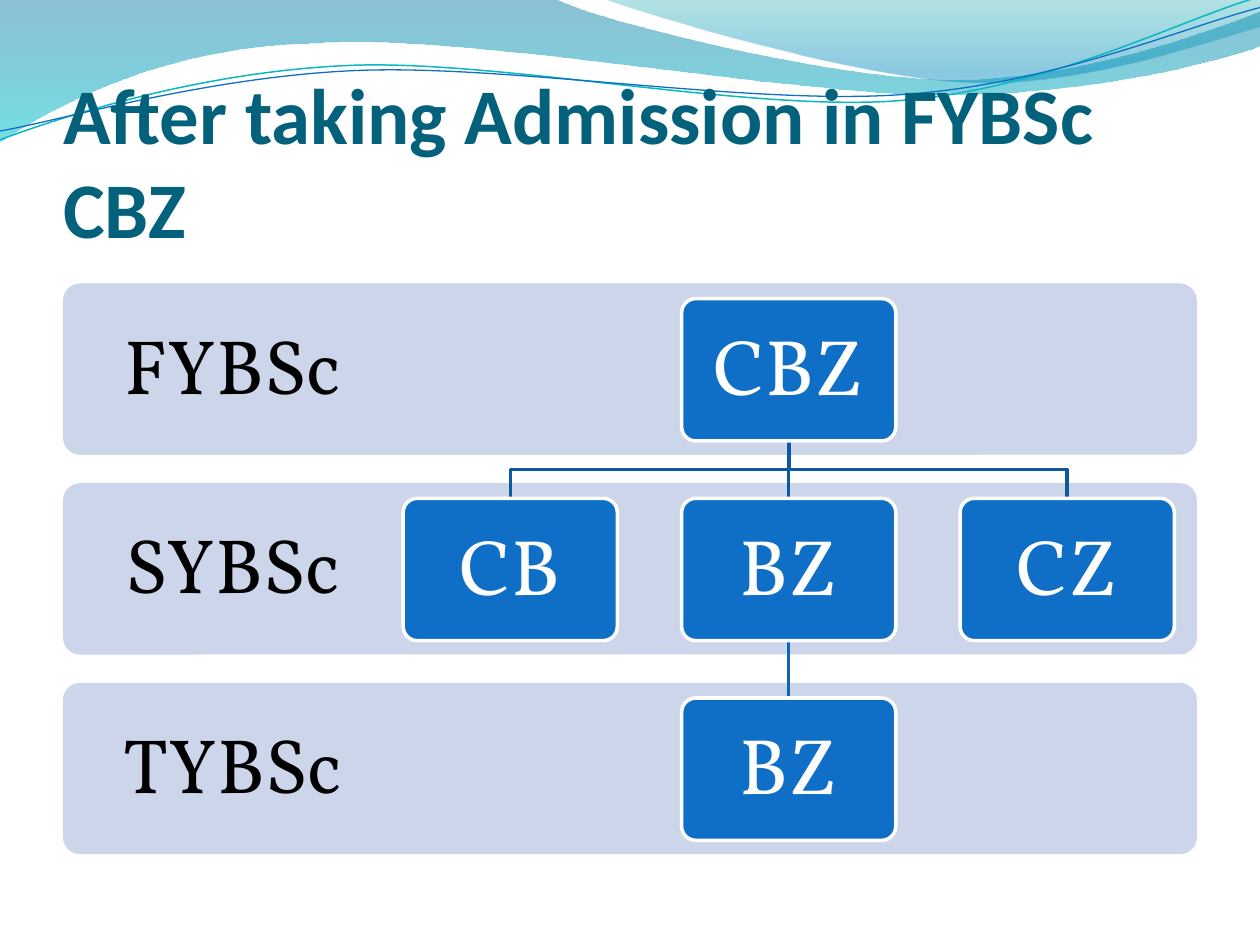
from dataclasses import dataclass

from lxml.etree import SubElement
from pptx import Presentation
from pptx.dml.color import RGBColor
from pptx.enum.shapes import MSO_SHAPE
from pptx.enum.text import MSO_ANCHOR, MSO_AUTO_SIZE, PP_ALIGN
from pptx.oxml.ns import qn
from pptx.util import Inches, Pt


@dataclass(frozen=True)
class Theme:
    title: str = "04617B"
    band: str = "CCD5EA"
    card: str = "0F6FC6"
    white: str = "FFFFFF"
    black: str = "000000"
    upper_link: str = "0C599F"
    lower_link: str = "0E65B4"
    teal_line: str = "0AB8BF"
    blue_line: str = "0F6FC6"
    heading_font: str = "Calibri"
    body_font: str = "Vollkorn"
    heading_size: int = 45
    card_size: int = 45
    label_size: int = 44


def rgb(value):
    return RGBColor.from_string(value)


def write_text(frame, text, *, font, size, color, bold=False, align=PP_ALIGN.CENTER,
               anchor=MSO_ANCHOR.MIDDLE, insets=(0, 0, 0, 0), spacing=None, after=None):
    frame.word_wrap = True
    frame.auto_size = MSO_AUTO_SIZE.NONE
    frame.vertical_anchor = anchor
    (frame.margin_left, frame.margin_top,
     frame.margin_right, frame.margin_bottom) = map(Inches, insets)
    paragraph = frame.paragraphs[0]
    paragraph.alignment = align
    paragraph.line_spacing = spacing
    paragraph.space_after = after
    run = paragraph.add_run()
    run.text = text
    run.font.name, run.font.size, run.font.bold = font, Pt(size), bold
    run.font.color.rgb = rgb(color)


class SlideBuilder:
    def __init__(self, slide, theme):
        self.slide, self.theme = slide, theme

    def title(self, text, box):
        heading = self.slide.shapes.title
        heading.left, heading.top, heading.width, heading.height = map(Inches, box)
        tree = heading._element.getparent()
        tree.append(heading._element)  # in front of the waves
        write_text(heading.text_frame, text, font=self.theme.heading_font,
                   size=self.theme.heading_size, color=self.theme.title, bold=True,
                   align=PP_ALIGN.LEFT, anchor=MSO_ANCHOR.BOTTOM, insets=(0, 0.05, 0, 0))

    def outline(self, start, segments, closed=False):
        """Draw line ends (x, y) and cubic curves (two handles and an end)."""
        points = [(Inches(segment[i]), Inches(segment[i + 1]))
                  for segment in segments for i in range(0, len(segment), 2)]
        builder = self.slide.shapes.build_freeform(*map(Inches, start))
        builder.add_line_segments(points, close=closed)
        shape = builder.convert_to_shape()
        shape.shadow.inherit = False
        lines = iter(list(shape._element.iter(qn("a:lnTo"))))
        for segment in segments:
            first, *handles = [next(lines) for _ in range(len(segment) // 2)]
            if handles:
                curve = first.makeelement(qn("a:cubicBezTo"))
                first.addprevious(curve)
                for line in (first, *handles):
                    curve.append(line[0])
                    line.getparent().remove(line)
        return shape

    def wave(self, start, segments, stops):
        wave = self.outline(start, segments, closed=True)
        wave.line.fill.background()
        wave.fill.gradient()
        wave.fill.gradient_angle = 270
        for stop, (position, color, opacity) in zip(wave.fill.gradient_stops, stops):
            stop.color.rgb = rgb(color)
            stop._gs.set("pos", str(position * 1000))
            SubElement(stop._gs[0], qn("a:alpha")).set("val", str(opacity * 1000))

    def stroke(self, start, segments, color, width):
        stroke = self.outline(start, segments)
        stroke.fill.background()
        stroke.line.color.rgb, stroke.line.width = rgb(color), Pt(width)

    def panel(self, box, fill, border=None):
        panel = self.slide.shapes.add_shape(MSO_SHAPE.ROUNDED_RECTANGLE, *map(Inches, box))
        panel.adjustments[0] = 0.1
        panel.shadow.inherit = False
        panel.fill.solid()
        panel.fill.fore_color.rgb = rgb(fill)
        if border:
            panel.line.color.rgb, panel.line.width = rgb(border), Pt(2)
        else:
            panel.line.fill.background()

    def label(self, text, box, size, color, inset):
        label = self.slide.shapes.add_textbox(*map(Inches, box))
        write_text(label.text_frame, text, font=self.theme.body_font, size=size, color=color,
                   insets=(inset,) * 4, spacing=0.9, after=Pt(15))

    def band(self, text, box, label_width):
        left, top, _, height = box
        self.panel(box, self.theme.band)
        self.label(text, (left, top, label_width, height),
                   self.theme.label_size, self.theme.black, 0.34)

    def card(self, text, box):
        left, top, width, height = box
        edge = 0.03
        self.panel(box, self.theme.card, self.theme.white)
        self.label(text, (left + edge, top + edge, width - 2 * edge, height - 2 * edge),
                   self.theme.card_size, self.theme.white, 0.19)


presentation = Presentation()
presentation.slide_width, presentation.slide_height = Inches(10), Inches(7.5)
theme = Theme()
page = SlideBuilder(presentation.slides.add_slide(presentation.slide_layouts[5]), theme)

# Waves along the top edge
page.wave((0, 0), [
    (4.4, -0.01), (4.76, 0.17, 6.64, 0.63, 7.58, 0.63), (8.53, 0.63, 9.58, 0.26, 10, 0.09),
    (10.01, 0.36), (9.83, 0.44, 8.7, 0.76, 7.46, 0.75), (6.22, 0.75, 3.82, 0.28, 2.57, 0.34),
    (1.29, 0.36, 0.46, 0.83, -0.01, 1.13), (0, 0)],
    [(0, "0074A1", 45), (100, "00C6CF", 55)])
page.wave((4.79, -0.01), [
    (5.09, 0.11, 6.82, 0.62, 7.69, 0.65), (8.56, 0.69, 9.61, 0.32, 10, 0.21),
    (10, 0), (4.79, -0.01)],
    [(0, "00A1A9", 30), (80, "008BBF", 45)])
page.stroke((0, 1.11), [
    (0.48, 0.93, 1.58, 0.57, 2.77, 0.52), (3.95, 0.47, 5.93, 0.89, 7.13, 0.8),
    (8.33, 0.71, 9.38, 0.15, 9.98, -0.02)], theme.teal_line, 0.85)
page.stroke((0, 1.04), [
    (0.47, 0.96, 1.64, 0.61, 2.83, 0.56), (4.03, 0.51, 5.97, 0.84, 7.17, 0.75),
    (8.36, 0.67, 9.41, 0.21, 10, 0.06)], theme.blue_line, 0.75)

# Title
page.title("After taking Admission in FYBSc CBZ", (0.5, 0.77, 9, 1.25))

# Year bands and the subject cards in each; a column is -1, 0 or 1
YEARS = [("FYBSc", {0: "CBZ"}), ("SYBSc", {-1: "CB", 0: "BZ", 1: "CZ"}), ("TYBSc", {0: "BZ"})]
BAND_TOP, BAND_HEIGHT, ROW_STEP = 2.25, 1.36, 1.585
CARD_TOP, CARD_WIDTH, CARD_HEIGHT = 2.37, 1.7, 1.13
CENTER, COLUMN_STEP = 6.26, 2.21

for row, (year, _) in reversed(list(enumerate(YEARS))):
    page.band(year, (0.5, BAND_TOP + row * ROW_STEP, 9, BAND_HEIGHT), 2.7)

# Links from each centre card down to the cards of the next year
for row, color in enumerate((theme.upper_link, theme.lower_link)):
    start = CARD_TOP + row * ROW_STEP + CARD_HEIGHT
    end = CARD_TOP + (row + 1) * ROW_STEP
    middle = (start + end) / 2
    for column in YEARS[row + 1][1]:
        x = CENTER + column * COLUMN_STEP
        bends = [(CENTER, middle), (x, middle)] if column else []
        page.stroke((CENTER, start), [*bends, (x, end)], color, 2)

# Subject cards
for row, (_, subjects) in enumerate(YEARS):
    for column, subject in subjects.items():
        page.card(subject, (CENTER + column * COLUMN_STEP - CARD_WIDTH / 2,
                            CARD_TOP + row * ROW_STEP, CARD_WIDTH, CARD_HEIGHT))

presentation.save("out.pptx")
